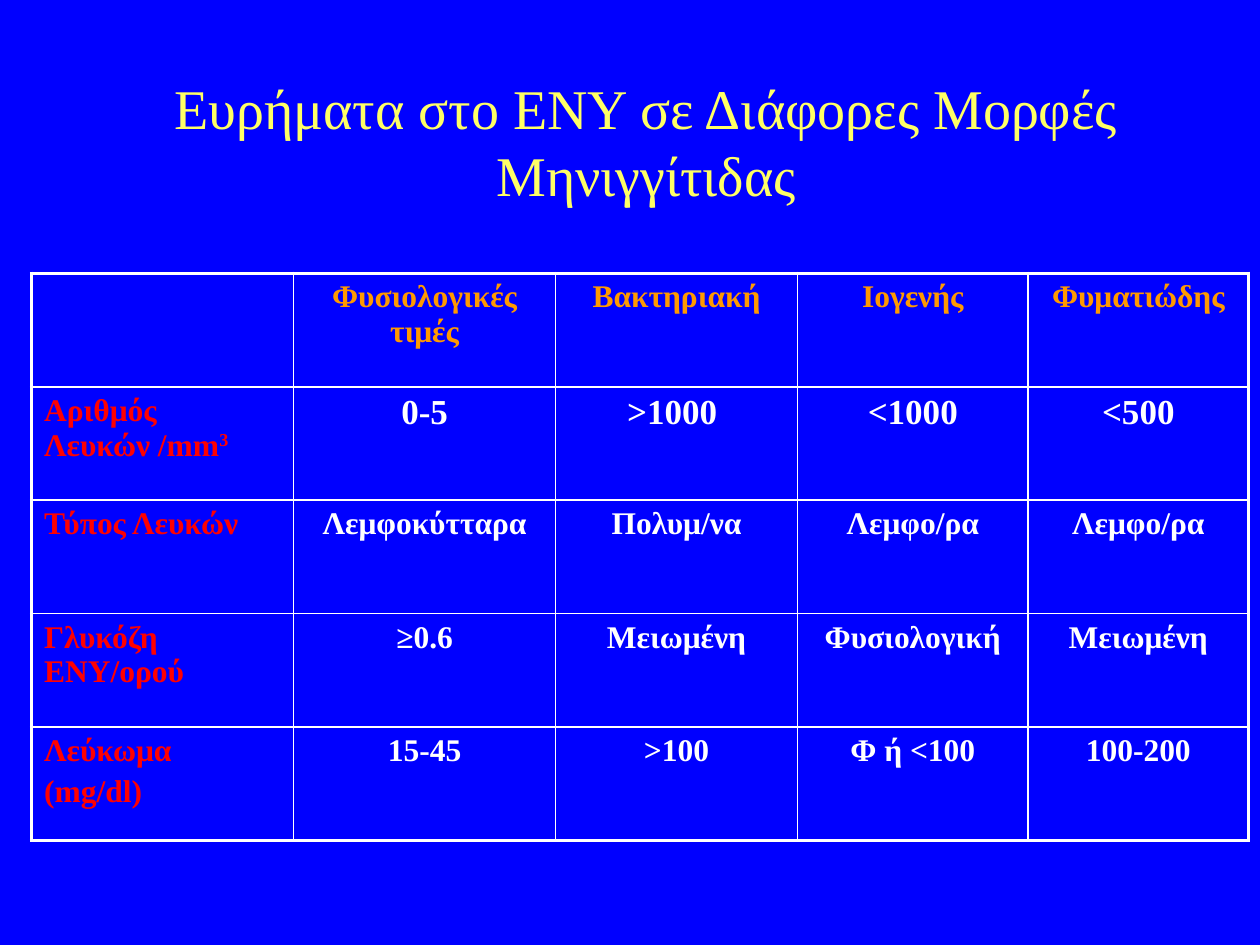
import pptx
import pptx.util
import pptx.dml.color
import pptx.enum.text
import pptx.oxml
import pptx.oxml.ns
from pptx.util import Inches

RGB = pptx.dml.color.RGBColor
BLUE = RGB(0x00, 0x00, 0xFF)
YELLOW = RGB(0xFF, 0xFF, 0x66)
ORANGE = RGB(0xFF, 0x99, 0x00)
RED = RGB(0xFF, 0x00, 0x00)
WHITE = RGB(0xFF, 0xFF, 0xFF)
FACE = "Times New Roman"
ALIGN = pptx.enum.text.PP_ALIGN
ANCHOR = pptx.enum.text.MSO_ANCHOR


def write(par, text, size, color, bold=True):
    run = par.add_run()
    run.text = text
    style = {"name": FACE, "size": pptx.util.Pt(size), "bold": bold}
    for key, value in style.items():
        setattr(run.font, key, value)
    run.font.color.rgb = color
    return run


def border(cell, side, width):
    props = cell._tc.get_or_add_tcPr()
    props.append(pptx.oxml.parse_xml(
        f'<a:ln{side} {pptx.oxml.ns.nsdecls("a")} w="{pptx.util.Pt(width)}">'
        f'<a:solidFill><a:srgbClr val="{WHITE}"/></a:solidFill></a:ln{side}>'))


# Slide and background
deck = pptx.Presentation()
deck.slide_width, deck.slide_height = Inches(10), Inches(7.5)
slide = deck.slides.add_slide(deck.slide_layouts[5])
slide.background.fill.solid()
slide.background.fill.fore_color.rgb = BLUE

# Title
title = slide.shapes.title
place = {"left": 0.42, "top": 0.33, "width": 9.42, "height": 1.57}
for key, value in place.items():
    setattr(title, key, Inches(value))
frame = title.text_frame
frame.word_wrap = True
frame.vertical_anchor = ANCHOR.MIDDLE
frame.paragraphs[0].alignment = ALIGN.CENTER
write(frame.paragraphs[0], "Ευρήματα στο ΕΝΥ σε Διάφορες Μορφές Μηνιγγίτιδας",
      32, YELLOW, False)

# Table contents; a line break starts a new paragraph
rows = [
    ["", "Φυσιολογικές τιμές", "Βακτηριακή", "Ιογενής", "Φυματιώδης"],
    ["Αριθμός Λευκών /mm", "0-5", ">1000 ", "<1000", "<500"],
    ["Τύπος Λευκών", "Λεμφοκύτταρα", "Πολυμ/να", "Λεμφο/ρα", "Λεμφο/ρα"],
    ["Γλυκόζη ΕΝΥ/ορού", "≥0.6", "Μειωμένη", "Φυσιολογική", "Μειωμένη"],
    ["Λεύκωμα\n(mg/dl)", "15-45", ">100", "Φ ή <100", "100-200"],
]
widths = [2.08, 2.08, 1.92, 1.83, 1.75]
last = len(rows) - 1
end = len(widths) - 1

# Table grid
table = slide.shapes.add_table(
    len(rows), len(widths), Inches(0.25), Inches(2.17),
    Inches(sum(widths)), Inches(4.5)).table
for key in ("first_row", "horz_banding"):
    setattr(table, key, False)
for col, width in zip(table.columns, widths):
    col.width = Inches(width)
for row in table.rows:
    row.height = Inches(0.9)

# Cells: thick outer frame, thin inner lines
for i, row in enumerate(rows):
    for j, text in enumerate(row):
        cell = table.cell(i, j)
        edges = {"L": j == 0, "R": j == end, "T": i == 0, "B": i == last}
        for side, outer in edges.items():
            border(cell, side, 2.25 if outer else 1)
        cell.fill.background()
        color = ORANGE if i == 0 else RED if j == 0 else WHITE
        size = 20 if i == 1 and j > 0 else 18
        for n, line in enumerate(text.split("\n") if text else []):
            frame = cell.text_frame
            par = frame.add_paragraph() if n else frame.paragraphs[0]
            par.alignment = ALIGN.CENTER if j else ALIGN.LEFT
            if n:
                par.space_before = pptx.util.Pt(3.6)
            write(par, line, size, color)

# Superscript of the cubic unit
unit = write(table.cell(1, 0).text_frame.paragraphs[0], "3", 18, RED)
unit.font._element.set("baseline", "30000")

deck.save("out.pptx")
